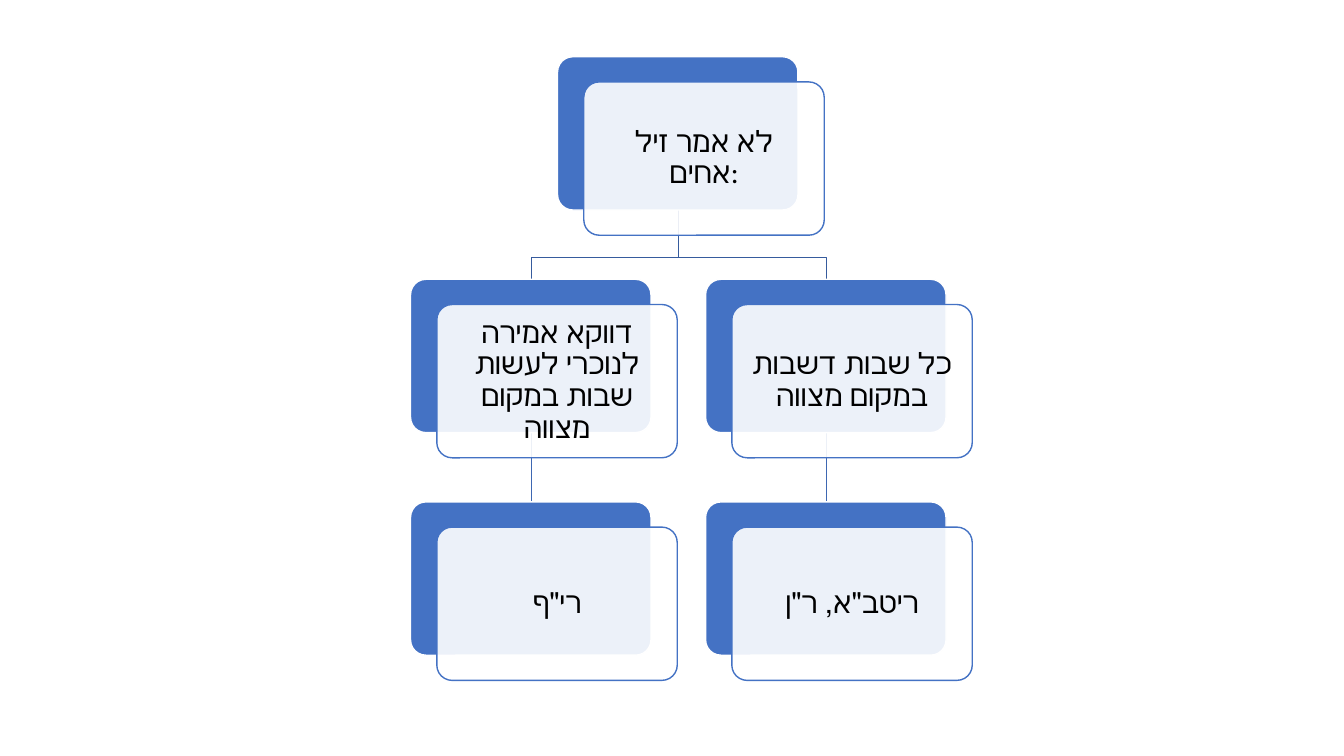
"""Build a slide with a three-level hierarchy of Hebrew cards."""
from lxml.etree import SubElement
from pptx import Presentation
from pptx.dml.color import RGBColor
from pptx.enum.shapes import MSO_CONNECTOR as CONNECTOR, MSO_SHAPE as SHAPE
from pptx.enum.text import MSO_ANCHOR as ANCHOR, PP_ALIGN as ALIGN
from pptx.oxml.ns import qn
from pptx.util import Emu, Pt

PX = 9525
CARD_W, CARD_H = 229, 146
OFFSET_X, OFFSET_Y = 25, 24
ROWS = [54 + 212 * level for level in range(3)]
ROOT_X = 531
BRANCHES = [
    (672, "כל שבות דשבות במקום מצווה", 'ריטב"א, ר"ן'),
    (391, "דווקא אמירה לנוכרי לעשות שבות במקום מצווה", 'רי"ף'),
]
BLUE, WHITE, BLACK = "4472C4", "FFFFFF", "000000"
ELBOW_BLUE, STEM_BLUE = "365B9D", "3E67B2"


def px(length):
    """Convert pixels to EMU."""
    return Emu(length * PX)


def color(hex_code):
    """Return the colour for a hex string."""
    return RGBColor.from_string(hex_code)


def set_line(shape, hex_code):
    """Give a shape or connector a thin line."""
    shape.line.color.rgb = color(hex_code)
    shape.line.width = Pt(1)


def add_panel(slide, x, y, fill, line):
    """Add one rounded rectangle of card size."""
    panel = slide.shapes.add_shape(
        SHAPE.ROUNDED_RECTANGLE, px(x), px(y), px(CARD_W), px(CARD_H))
    panel.adjustments[0] = 0.1
    panel.shadow.inherit = False
    panel.fill.solid()
    panel.fill.fore_color.rgb = color(fill)
    set_line(panel, line)
    return panel


def add_card(slide, x, y, wording):
    """Add a blue panel with a translucent text panel in front."""
    add_panel(slide, x, y, BLUE, WHITE)
    front = add_panel(slide, x + OFFSET_X, y + OFFSET_Y, WHITE, BLUE)
    fill_color = front.fill._xPr.find(qn("a:solidFill"))[0]
    SubElement(fill_color, qn("a:alpha"), val="90000")

    frame = front.text_frame
    frame.word_wrap = True
    frame.vertical_anchor = ANCHOR.MIDDLE
    frame.margin_left = frame.margin_right = px(13)
    frame.margin_top = frame.margin_bottom = px(13)
    frame.text = wording
    paragraph = frame.paragraphs[0]
    paragraph.alignment = ALIGN.CENTER
    paragraph.line_spacing = 0.9
    paragraph.font.name = "Calibri"
    paragraph.font.size = Pt(21)
    paragraph.font.color.rgb = color(BLACK)


def add_elbow(slide, start_x, start_y, end_x, end_y, bend_y):
    """Add a bent line from the root card to a branch card."""
    builder = slide.shapes.build_freeform(start_x, start_y, scale=PX)
    builder.add_line_segments(
        [(start_x, bend_y), (end_x, bend_y), (end_x, end_y)], close=False)
    elbow = builder.convert_to_shape()
    elbow.shadow.inherit = False
    elbow.fill.background()
    set_line(elbow, ELBOW_BLUE)


def add_stem(slide, x, top, bottom):
    """Add a straight vertical line between two cards."""
    stem = slide.shapes.add_connector(
        CONNECTOR.STRAIGHT, px(x), px(top), px(x), px(bottom))
    set_line(stem, STEM_BLUE)
    SubElement(stem._element.spPr, qn("a:effectLst"))


def main():
    """Draw the hierarchy and save it."""
    deck = Presentation()
    deck.slide_width, deck.slide_height = px(1280), px(720)
    slide = deck.slides.add_slide(deck.slide_layouts[6])
    root_y, opinion_y, source_y = ROWS
    half = CARD_W // 2 + 1

    for x, _, _ in BRANCHES:
        add_stem(slide, x + half, opinion_y + CARD_H, source_y)
        add_elbow(slide, ROOT_X + half, root_y + CARD_H,
                  x + half, opinion_y, 245)

    add_card(slide, ROOT_X, root_y, "לא אמר זיל אחים:")
    for x, opinion, source in BRANCHES:
        add_card(slide, x, opinion_y, opinion)
        add_card(slide, x, source_y, source)

    deck.save("out.pptx")


if __name__ == "__main__":
    main()
